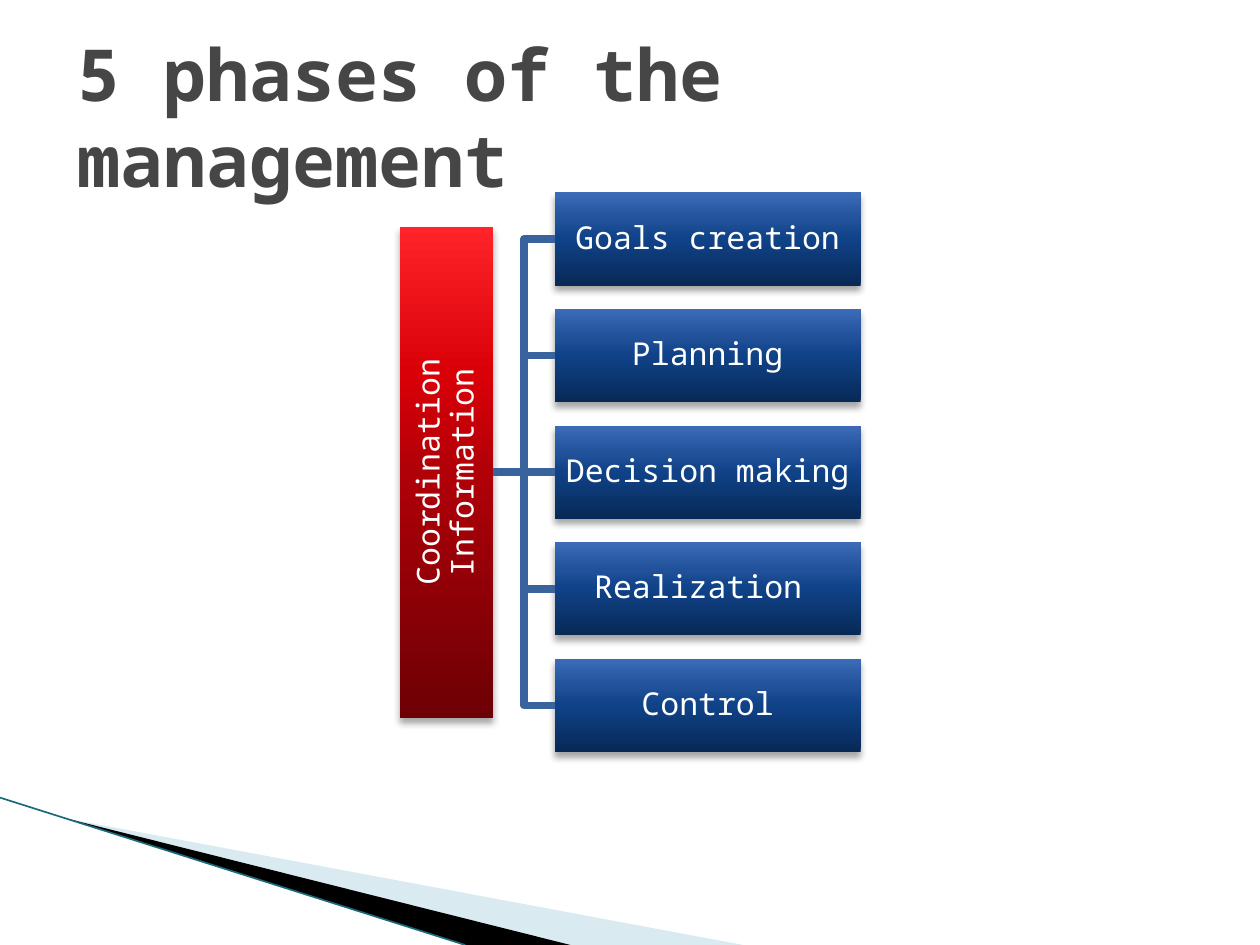
from lxml import etree
from pptx import Presentation
from pptx.dml.color import RGBColor
from pptx.enum.shapes import MSO_CONNECTOR as CONNECTOR, MSO_SHAPE as SHAPE
from pptx.enum.text import MSO_ANCHOR as ANCHOR, PP_ALIGN as ALIGN
from pptx.oxml import parse_xml
from pptx.oxml.ns import nsdecls, qn
from pptx.util import Cm, Pt

FONT = "Noto Sans Mono"
COLORS = {
    "title": "464646",
    "label": "FFFFFF",
    "branch": "39639D",
    "pale wedge": "A0CBDC",
    "dark wedge": "000000",
    "edge": "1B6A7C",
    "shadow": "000000",
}
# Gradient stops from the bottom of a box to its top
GRADIENT_STOPS = (0, 50, 70, 100)
GRADIENTS = {
    "red": ("6D0005", "B00008", "DA0008", "FF2429"),
    "blue": ("072956", "104288", "205199", "3D6BB9"),
}
PHASES = ["Goals creation", "Planning", "Decision making", "Realization ", "Control"]


def rgb(name):
    return RGBColor.from_string(COLORS[name])


def format_text(frame, size, color, bold=False):
    for paragraph in frame.paragraphs:
        for run in paragraph.runs:
            run.font.name = FONT
            run.font.size = Pt(size)
            run.font.bold = bold
            run.font.color.rgb = rgb(color)


def add_line(slide, kind, start, end, color, width):
    line = slide.shapes.add_connector(kind, *start, *end)
    line.line.color.rgb = rgb(color)
    line.line.width = Pt(width)
    etree.SubElement(line._element.spPr, qn("a:effectLst"))
    return line


def add_wedge(slide, points, color, opacity=100):
    first, *rest = [(Cm(x), Cm(y)) for x, y in points]
    builder = slide.shapes.build_freeform(*first, scale=1.0)
    builder.add_line_segments(rest, close=True)
    wedge = builder.convert_to_shape()
    wedge.shadow.inherit = False
    wedge.line.fill.background()
    wedge.fill.solid()
    wedge.fill.fore_color.rgb = rgb(color)
    if opacity < 100:
        srgb = wedge._element.spPr.find(".//" + qn("a:srgbClr"))
        etree.SubElement(srgb, qn("a:alpha"), val=str(opacity * 1000))


def add_corner_decoration(slide, left, top, bottom):
    """Two wedges and an edge line running down to the slide's bottom."""
    tip = (left + 1.38, top + 0.43)
    add_wedge(slide, [tip, (left + 14.98, bottom), (left + 11.5, bottom)],
              "pale wedge", opacity=40)
    add_wedge(slide, [tip, (left + 11.5, bottom), (left + 9.38, bottom)], "dark wedge")
    add_line(slide, CONNECTOR.STRAIGHT, (Cm(left), Cm(top)),
             (Cm(left + 9.38), Cm(bottom)), "edge", 0.95)


def add_title(slide, left, top, width, height):
    title = slide.shapes.title
    title.left, title.top, title.width, title.height = left, top, width, height
    frame = title.text_frame
    frame.text = "5 phases of the management"
    frame.word_wrap = True
    frame.vertical_anchor = ANCHOR.MIDDLE
    frame.paragraphs[0].alignment = ALIGN.LEFT
    format_text(frame, 41, "title", bold=True)


def add_box(slide, label, gradient, left, top, width, height):
    """A labelled box with a vertical gradient and a soft shadow below."""
    box = slide.shapes.add_shape(SHAPE.RECTANGLE, left, top, width, height)
    box.line.fill.background()
    stops = "".join(
        f'<a:gs pos="{stop * 1000}"><a:srgbClr val="{color}"/></a:gs>'
        for stop, color in zip(GRADIENT_STOPS, GRADIENTS[gradient]))
    properties = box._element.spPr
    properties.find(qn("a:prstGeom")).addnext(parse_xml(
        f'<a:gradFill {nsdecls("a")} rotWithShape="1"><a:gsLst>{stops}</a:gsLst>'
        '<a:lin ang="16200000" scaled="0"/></a:gradFill>'))
    properties.append(parse_xml(
        f'<a:effectLst {nsdecls("a")}><a:outerShdw blurRad="{Pt(4)}" dist="{Pt(3)}" '
        f'dir="5400000" rotWithShape="0"><a:srgbClr val="{COLORS["shadow"]}">'
        '<a:alpha val="35000"/></a:srgbClr></a:outerShdw></a:effectLst>'))

    frame = box.text_frame
    frame.word_wrap = True
    frame.vertical_anchor = ANCHOR.MIDDLE
    frame.margin_left = frame.margin_right = Cm(0.03)
    frame.margin_top = frame.margin_bottom = Cm(0.03)
    paragraph = frame.paragraphs[0]
    paragraph.text = label
    paragraph.alignment = ALIGN.CENTER
    paragraph.line_spacing = 0.9
    format_text(frame, 18, "label")
    return box


def add_phase_tree(slide, left, top, width, height):
    """An upright bar joined by branches to a column of phases."""
    box_height = Cm(1.88)
    phase_width = Cm(6.17)
    bar_height = Cm(9.9)
    pitch = (height - box_height) // (len(PHASES) - 1)

    bar = add_box(slide, "Coordination\vInformation", "red", left,
                  top + (height - bar_height) // 2, box_height, bar_height)
    bar.text_frame._txBody.bodyPr.set("vert", "vert270")

    for index, phase in enumerate(PHASES):
        box = add_box(slide, phase, "blue", left + width - phase_width,
                      top + index * pitch, phase_width, box_height)
        is_middle = index == len(PHASES) // 2
        kind = CONNECTOR.STRAIGHT if is_middle else CONNECTOR.ELBOW
        branch = add_line(slide, kind, (0, 0), (0, 0), "branch", 4.33)
        branch.begin_connect(bar, 3)
        branch.end_connect(box, 1)


def main():
    deck = Presentation()
    deck.slide_width, deck.slide_height = Cm(25.4), Cm(19.05)
    slide = deck.slides.add_slide(deck.slide_layouts.get_by_name("Title Only"))
    add_corner_decoration(slide, 0, 16.08, 19.05)
    add_title(slide, Cm(1.3), Cm(0.74), Cm(22.86), Cm(3.18))
    add_phase_tree(slide, Cm(8.06), Cm(3.88), Cm(9.29), Cm(11.28))
    deck.save("out.pptx")


if __name__ == "__main__":
    main()
